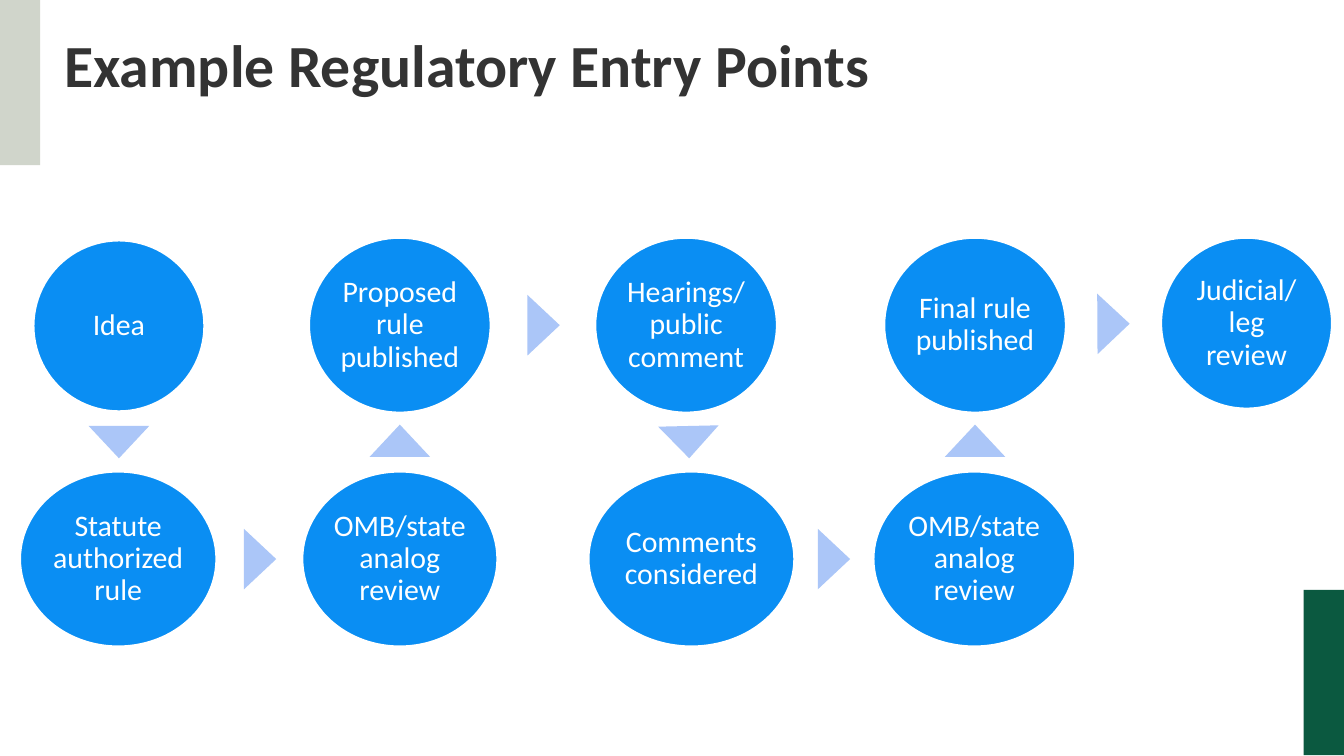
from pptx import Presentation
from pptx import util as u
from pptx.dml.color import RGBColor
from pptx.enum import shapes, text

COLORS = {"stage": "0A8EF3", "arrow": "ABC6F8", "white": "FFFFFF",
          "title": "333333", "sage": "D0D5CB", "forest": "0B5940"}
FONT = "Calibri"
ARROW_SIZE = (0.45, 0.24)
UPPER, LOWER = 1.77, 3.51
STAGES = [
    ("Idea", (0.25, 1.79, 1.27, 1.27)),
    ("Statute authorized rule", (0.15, LOWER, 1.46, 1.3)),
    ("OMB/state analog review", (2.25, LOWER, 1.45, 1.3)),
    ("Proposed rule published", (2.3, UPPER, 1.35, 1.3)),
    ("Hearings/ public comment", (4.43, UPPER, 1.35, 1.3)),
    ("Comments considered", (4.38, LOWER, 1.53, 1.3)),
    ("OMB/state analog review", (6.5, LOWER, 1.5, 1.3)),
    ("Final rule published", (6.58, UPPER, 1.35, 1.3)),
    ("Judicial/ leg review", (8.64, UPPER, 1.27, 1.27)),
]
ARROWS = [
    (0.66, 3.17, 180), (1.71, 4.04, 90), (2.75, 3.16, 0), (3.82, 2.3, 90),
    (4.9, 3.17, 178.7), (5.98, 4.04, 90), (7.03, 3.16, 0), (8.06, 2.29, 89.7),
]


def rgb(name):
    """Return the palette colour with this name."""
    return RGBColor.from_string(COLORS[name])


def add_block(page, kind, box, color):
    """Add a flat filled shape without an outline."""
    block = page.shapes.add_shape(kind, *map(u.Inches, box))
    block.shadow.inherit = False
    block.fill.solid()
    block.fill.fore_color.rgb = rgb(color)
    block.line.fill.background()
    return block


def style_para(para, size, color):
    """Set the font and line spacing of a paragraph."""
    para.line_spacing = 0.9
    para.font.name = FONT
    para.font.size = u.Pt(size)
    para.font.color.rgb = rgb(color)


def add_title(page, box, title):
    """Add the bold slide title near the top of its box."""
    frame = page.shapes.add_textbox(*map(u.Inches, box)).text_frame
    frame.word_wrap = True
    frame.vertical_anchor = text.MSO_ANCHOR.TOP
    frame.margin_top = u.Inches(0.2)
    para = frame.paragraphs[0]
    para.text = title
    style_para(para, 32, "title")
    para.font.bold = True


def add_stage(page, box, label):
    """Add one labelled circle of the process."""
    stage = add_block(page, shapes.MSO_SHAPE.OVAL, box, "stage")
    stage.line.color.rgb = rgb("white")
    stage.line.width = u.Pt(1)
    frame = stage.text_frame
    frame.word_wrap = True
    frame.vertical_anchor = text.MSO_ANCHOR.MIDDLE
    frame.margin_left = frame.margin_right = u.Inches(0.02)
    frame.margin_top = frame.margin_bottom = u.Inches(0.02)
    para = frame.paragraphs[0]
    para.text = label
    para.alignment = text.PP_ALIGN.CENTER
    style_para(para, 16, "white")


def add_process(page):
    """Add the stages and the triangles that lead between them."""
    for label, box in STAGES:
        add_stage(page, box, label)
    for left, top, angle in ARROWS:
        arrow = add_block(page, shapes.MSO_SHAPE.ISOSCELES_TRIANGLE,
                          (left, top, *ARROW_SIZE), "arrow")
        arrow.rotation = angle


def main():
    """Build and save the deck."""
    deck = Presentation()
    deck.slide_width = u.Inches(10)
    deck.slide_height = deck.slide_width * 9 // 16
    page = deck.slides.add_slide(deck.slide_layouts[6])
    add_block(page, shapes.MSO_SHAPE.RECTANGLE, (9.7, 4.39, 0.3, 1.23), "forest")
    add_block(page, shapes.MSO_SHAPE.RECTANGLE, (0, 0, 0.3, 1.23), "sage")
    add_title(page, (0.38, 0.07, 9.31, 1.28), "Example Regulatory Entry Points")
    add_process(page)
    deck.save("out.pptx")


if __name__ == "__main__":
    main()
